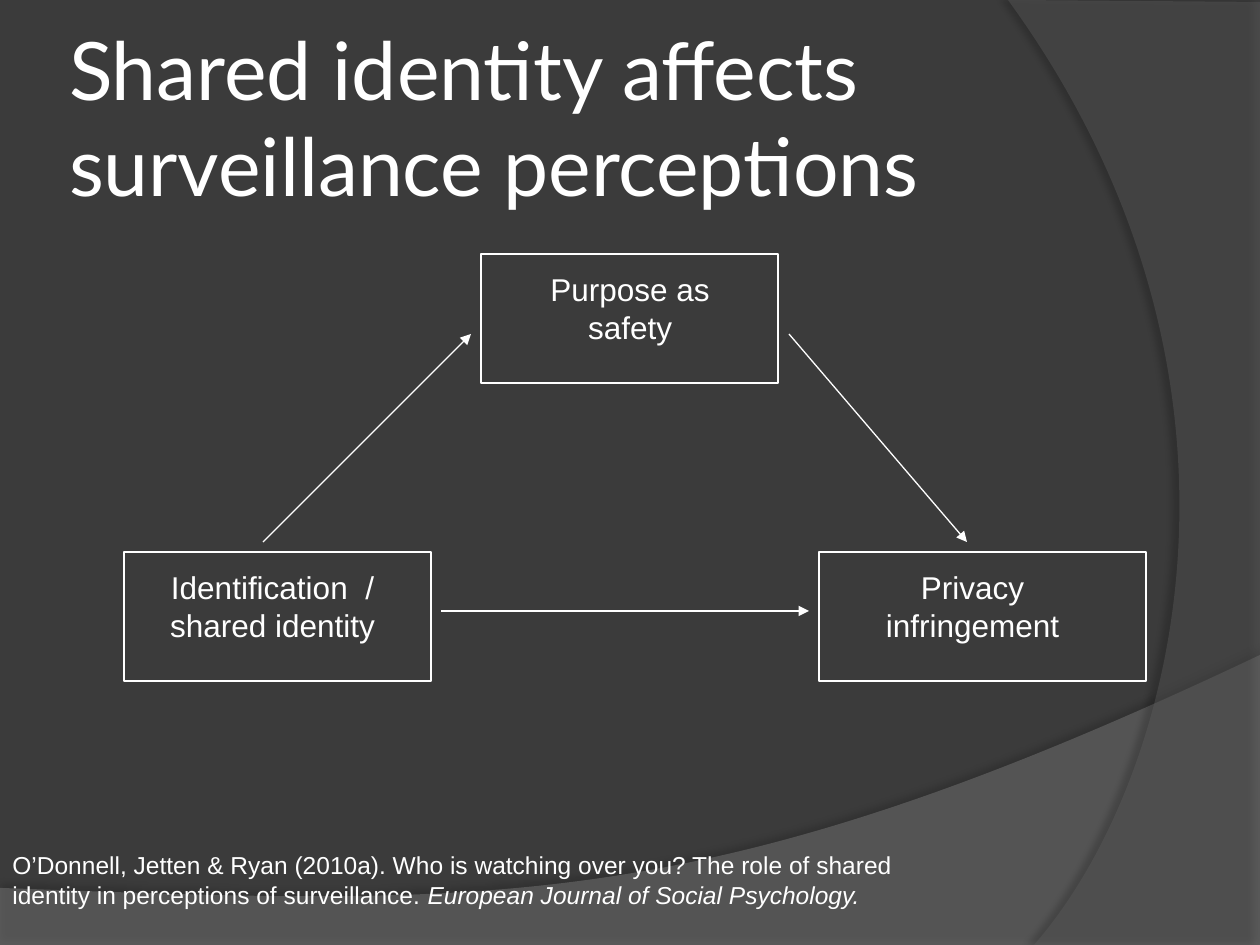
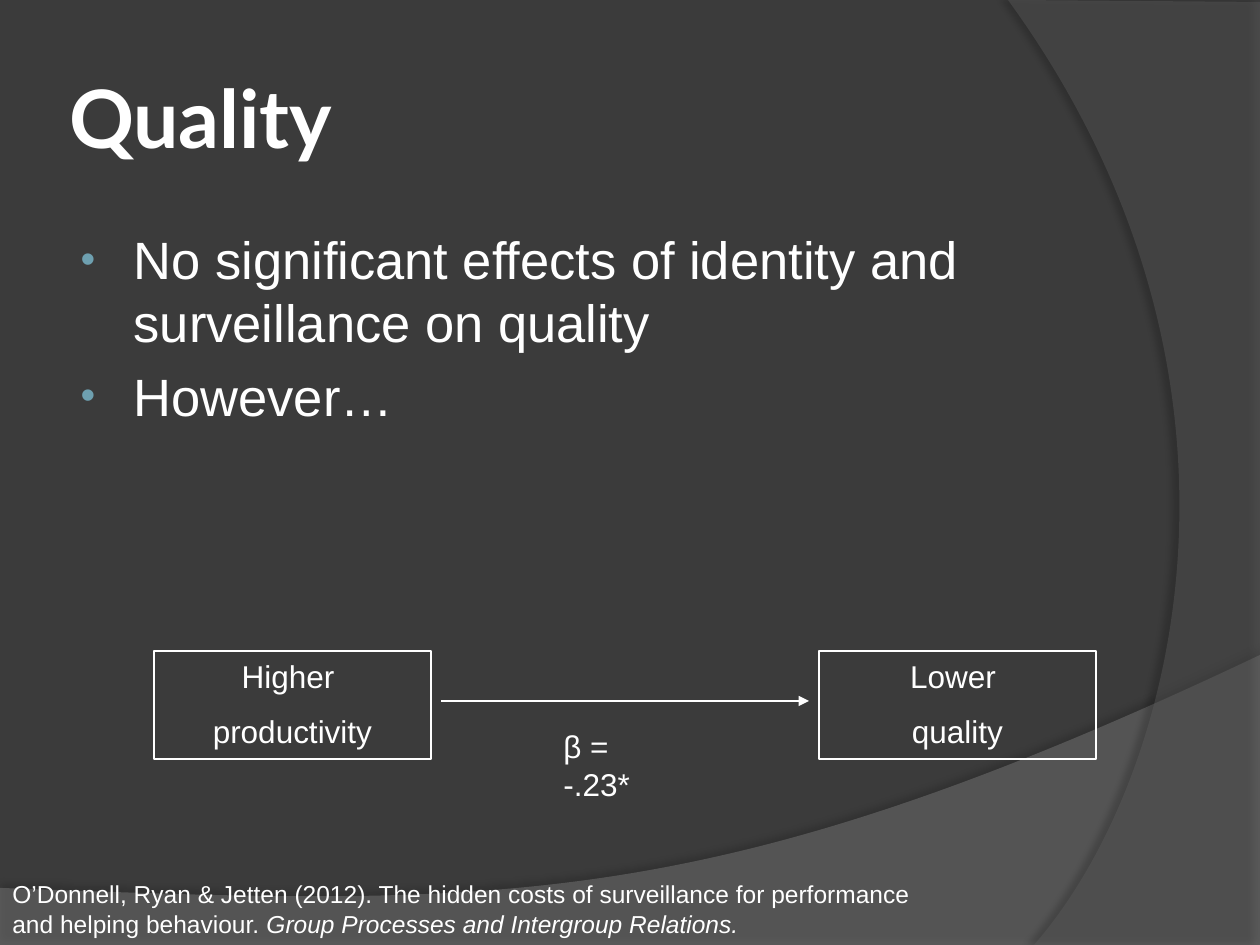
from lxml.etree import SubElement
from pptx import Presentation
from pptx.dml.color import RGBColor
from pptx.enum.shapes import MSO_CONNECTOR, MSO_SHAPE
from pptx.enum.text import MSO_ANCHOR, MSO_AUTO_SIZE, PP_ALIGN
from pptx.oxml.ns import qn
from pptx.util import Emu, Pt

SCALE = 914400 / 126
WIDE, HIGH = 1260, 945
WHITE, DARK = "FFFFFF", "3B3B3B"
LOW, SIDE, DOT = "7F7F7F", "5E5E5E", "6EA0B0"
HEAD, BODY = "Lato", "Arial"


def px(num):
    """Turn pixels into EMU."""
    return Emu(round(num * SCALE))


def tint(code):
    """Turn a hex string into a colour."""
    return RGBColor.from_string(code)


def add(node, tag, **attrs):
    """Append a child element with attributes."""
    return SubElement(node, qn(tag), {key: str(val) for key, val in attrs.items()})


def place(shape, area):
    """Move a shape to an area."""
    shape.left, shape.top, shape.width, shape.height = map(px, area)


def style(run, size, font=BODY, bold=False, slant=False):
    """Format one run in white."""
    run.font.size, run.font.name = Pt(size), font
    run.font.bold, run.font.italic = bold, slant
    run.font.color.rgb = tint(WHITE)


def bend(shape, pulls):
    """Turn the last edge of a freeform into a cubic curve."""
    edge = shape.element.findall(".//" + qn("a:lnTo"))[-1]
    edge.tag = qn("a:cubicBezTo")
    for rank, (x, y) in enumerate(pulls):
        spot = add(edge, "a:pt", x=px(x) - shape.left, y=px(y) - shape.top)
        edge.insert(rank, spot)


def band(deck, slide, points, pulls, code, clear, shade, far, angle):
    """Draw a see-through band with a shadow and move it to the master."""
    spots = [(px(x), px(y)) for x, y in points]
    pen = slide.shapes.build_freeform(*spots[0])
    pen.add_line_segments(spots[1:], close=True)
    shape = pen.convert_to_shape()
    bend(shape, pulls)
    shape.fill.solid()
    shape.fill.fore_color.rgb = tint(code)
    shape.line.fill.background()
    shape.shadow.inherit = False
    props = shape.element.spPr
    add(props.find(".//" + qn("a:srgbClr")), "a:alpha", val=clear * 1000)
    cast = add(props.find(qn("a:effectLst")), "a:outerShdw", blurRad=Pt(4),
               dist=Pt(far), dir=angle * 60000, algn="ctr", rotWithShape=0)
    add(add(cast, "a:srgbClr", val="000000"), "a:alpha", val=shade * 1000)
    deck.slide_master.element.cSld.spTree.insert(2, shape.element)


def theme(deck, slide):
    """Give the master its ground and bands."""
    ground = deck.slide_master.background.fill
    ground.solid()
    ground.fore_color.rgb = tint(DARK)
    band(deck, slide, [(WIDE, 2), (WIDE, HIGH), (1034, HIGH), (1008, 0)],
         [(1178, 780), (1283, 378)], SIDE, 40, 45, 4, 180)
    band(deck, slide, [(0, HIGH), (WIDE, HIGH), (WIDE, 655), (0, 888)],
         [(704, 919), (493, 906)], LOW, 45, 35, 3.5, 270)


def title(slide, text, bold=False):
    """Fill the title placeholder."""
    shape = slide.shapes.title
    place(shape, (63, 38, 1029, 157))
    frame = shape.text_frame
    frame.text = text
    frame.auto_size, frame.vertical_anchor = MSO_AUTO_SIZE.NONE, MSO_ANCHOR.MIDDLE
    frame.margin_left = frame.margin_right = px(6)
    frame.margin_top = frame.margin_bottom = px(6)
    para = frame.paragraphs[0]
    para.alignment = PP_ALIGN.LEFT
    style(para.runs[0], 46, HEAD, bold)


def points(slide, text):
    """Fill the body placeholder with bullets."""
    shape = slide.placeholders[1]
    place(shape, (63, 221, 1134, 291))
    frame = shape.text_frame
    frame.text = text
    frame.auto_size = MSO_AUTO_SIZE.NONE
    for para in frame.paragraphs:
        para.space_before = Pt(6)
        style(para.runs[0], 30)
        props = para._p.get_or_add_pPr()
        props.set("marL", str(px(58)))
        props.set("indent", str(px(-53)))
        add(add(props, "a:buClr"), "a:srgbClr", val=DOT)
        add(props, "a:buSzPct", val=80000)
        add(props, "a:buFont", typeface=BODY)
        add(props, "a:buChar", char="•")


def write(shape, text, size=18, align=PP_ALIGN.CENTER):
    """Set wrapped text from the top of a shape."""
    frame = shape.text_frame
    frame.text = text
    frame.word_wrap, frame.vertical_anchor = True, MSO_ANCHOR.TOP
    for rank, para in enumerate(frame.paragraphs):
        para.alignment = align
        if rank:
            para.space_before = Pt(9.5)
        style(para.runs[0], size)
    return frame


def label(slide, area, text, size=18, align=PP_ALIGN.CENTER):
    """Add a text box."""
    return write(slide.shapes.add_textbox(*map(px, area)), text, size, align)


def box(slide, area, text=None):
    """Add an outlined box, with text if given."""
    shape = slide.shapes.add_shape(MSO_SHAPE.RECTANGLE, *map(px, area))
    shape.shadow.inherit = False
    shape.fill.background()
    shape.line.color.rgb, shape.line.width = tint(WHITE), Pt(0.75)
    if text:
        write(shape, text)


def arrow(slide, start, end):
    """Add a thin arrow between two points."""
    link = slide.shapes.add_connector(MSO_CONNECTOR.STRAIGHT, *map(px, start + end))
    link.line.color.rgb, link.line.width = tint(WHITE), Pt(0.75)
    props = link.element.spPr
    add(props.find(qn("a:ln")), "a:tailEnd", type="triangle")
    add(props, "a:effectLst")


def cite(slide, top, text, source):
    """Add a reference with its journal in italics."""
    frame = label(slide, (0, top, 942, 72), text, 14, PP_ALIGN.LEFT)
    run = frame.paragraphs[0].add_run()
    run.text = source
    style(run, 14, slant=True)


def shared(slide):
    """Build the shared identity slide."""
    title(slide, "Shared identity affects surveillance perceptions")
    label(slide, (124, 562, 297, 89), "Identification  / shared identity")
    label(slide, (819, 562, 307, 145), "Privacy infringement")
    for area in ((124, 552, 307, 129), (819, 552, 327, 129), (481, 254, 297, 129)):
        box(slide, area)
    label(slide, (501, 264, 258, 88), "Purpose as safety")
    arrow(slide, (441, 611), (809, 611))
    arrow(slide, (263, 542), (471, 334))
    arrow(slide, (789, 334), (967, 542))
    cite(slide, 844, "O’Donnell, Jetten & Ryan (2010a). Who is watching over you? "
         "The role of shared identity in perceptions of surveillance. ",
         "European Journal of Social Psychology.")


def quality(slide):
    """Build the quality slide."""
    title(slide, "Quality", True)
    points(slide, "No significant effects of identity and surveillance on quality\n"
           "However…")
    box(slide, (154, 651, 277, 108), "Higher \nproductivity")
    box(slide, (819, 651, 277, 108), "Lower \nquality")
    arrow(slide, (441, 701), (809, 701))
    label(slide, (551, 721, 145, 50), "β = -.23*", align=PP_ALIGN.LEFT)
    cite(slide, 873, "O’Donnell, Ryan & Jetten (2012). The hidden costs of "
         "surveillance for performance and helping behaviour.",
         " Group Processes and Intergroup Relations.")


def main():
    """Build and save the deck."""
    deck = Presentation()
    deck.slide_width, deck.slide_height = px(WIDE), px(HIGH)
    first = deck.slides.add_slide(deck.slide_layouts[5])
    theme(deck, first)
    shared(first)
    quality(deck.slides.add_slide(deck.slide_layouts[1]))
    deck.save("out.pptx")


if __name__ == "__main__":
    main()
